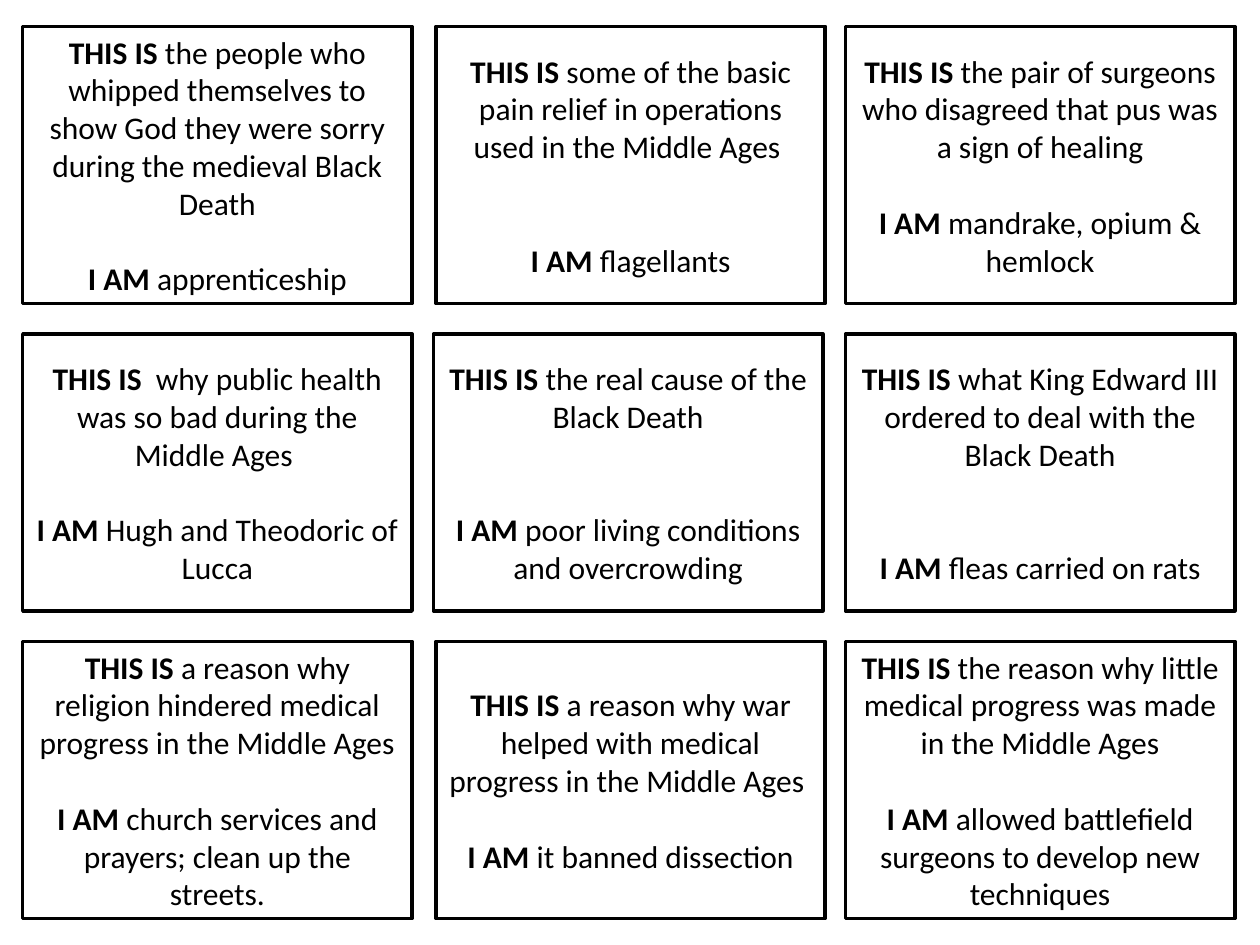
"""Build a sheet of nine medieval medicine loop cards."""
from dataclasses import dataclass

from pptx import Presentation
from pptx.dml.color import RGBColor
from pptx.enum.shapes import MSO_SHAPE
from pptx.enum.text import MSO_ANCHOR, PP_ALIGN
from pptx.util import Inches, Pt

LEFTS = (0.18, 3.46, 6.71)
TOP, ROW_STEP = 0.21, 2.44
CARD_W, CARD_H = 3.09, 2.2
LINE_PT = 21.6


@dataclass
class Card:
    """One loop card: a clue, an answer and the lines of space between them."""
    clue: str
    answer: str
    gap_lines: int = 1
    nudge: float = 0


CARDS = (
    Card(" the people who whipped themselves to show God they were sorry "
         "during the medieval Black Death", " apprenticeship"),
    Card(" some of the basic pain relief in operations used in the Middle Ages ",
         " flagellants", 2),
    Card(" the pair of surgeons who disagreed that pus was a sign of healing",
         " mandrake, opium & hemlock"),
    Card("  why public health was so bad during the Middle Ages ",
         " Hugh and Theodoric of Lucca"),
    Card(" the real cause of the Black Death",
         " poor living conditions and overcrowding", 2, -0.02),
    Card(" what King Edward III ordered to deal with the Black Death",
         " fleas carried on rats", 2),
    Card(" a reason why religion hindered medical progress in the Middle Ages",
         " church services and prayers; clean up the streets."),
    Card(" a reason why war helped with medical progress in the Middle Ages ",
         " it banned dissection"),
    Card(" the reason why little medical progress was made in the Middle Ages",
         " allowed battlefield surgeons to develop new techniques"),
)


def color(value: str) -> RGBColor:
    """Return the colour for a hex string."""
    return RGBColor.from_string(value)


def add_line(p, label: str, text: str) -> None:
    """Write a bold label and plain text into a centred paragraph."""
    p.alignment = PP_ALIGN.CENTER
    for words, bold in ((label, True), (text, False)):
        r = p.add_run()
        r.text = words
        for name, value in {"name": "Calibri", "size": Pt(18), "bold": bold}.items():
            setattr(r.font, name, value)
        r.font.color.rgb = color("000000")


def add_card(s, card: Card, left: float, top: float) -> None:
    """Draw one outlined card with its clue and answer."""
    sp = s.shapes.add_shape(MSO_SHAPE.RECTANGLE, Inches(left), Inches(top),
                            Inches(CARD_W), Inches(CARD_H))
    sp.shadow.inherit = False
    sp.fill.solid()
    sp.fill.fore_color.rgb = color("FFFFFF")
    sp.line.color.rgb = color("000000")
    sp.line.width = Pt(2)
    tf = sp.text_frame
    for name, value in {"word_wrap": True, "vertical_anchor": MSO_ANCHOR.MIDDLE}.items():
        setattr(tf, name, value)
    add_line(tf.paragraphs[0], "THIS IS", card.clue)
    p = tf.add_paragraph()
    p.space_before = Pt(card.gap_lines * LINE_PT)
    add_line(p, "I AM", card.answer)


def main() -> None:
    """Lay the cards out in a grid of three columns and save the deck."""
    prs = Presentation()
    prs.slide_width, prs.slide_height = Inches(10), Inches(7.5)
    s = prs.slides.add_slide(prs.slide_layouts[6])
    for i, card in enumerate(CARDS):
        row, col = divmod(i, len(LEFTS))
        add_card(s, card, LEFTS[col] + card.nudge, TOP + row * ROW_STEP)
    prs.save("out.pptx")


if __name__ == "__main__":
    main()
